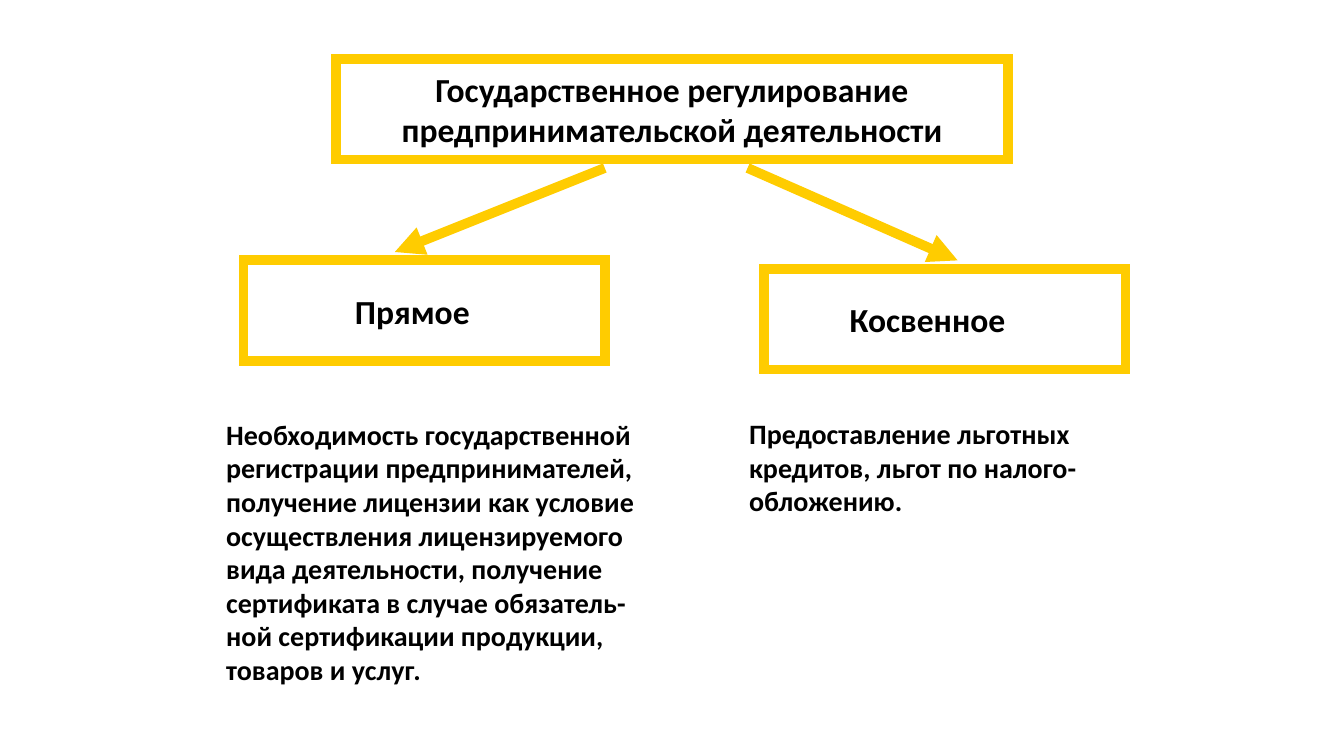
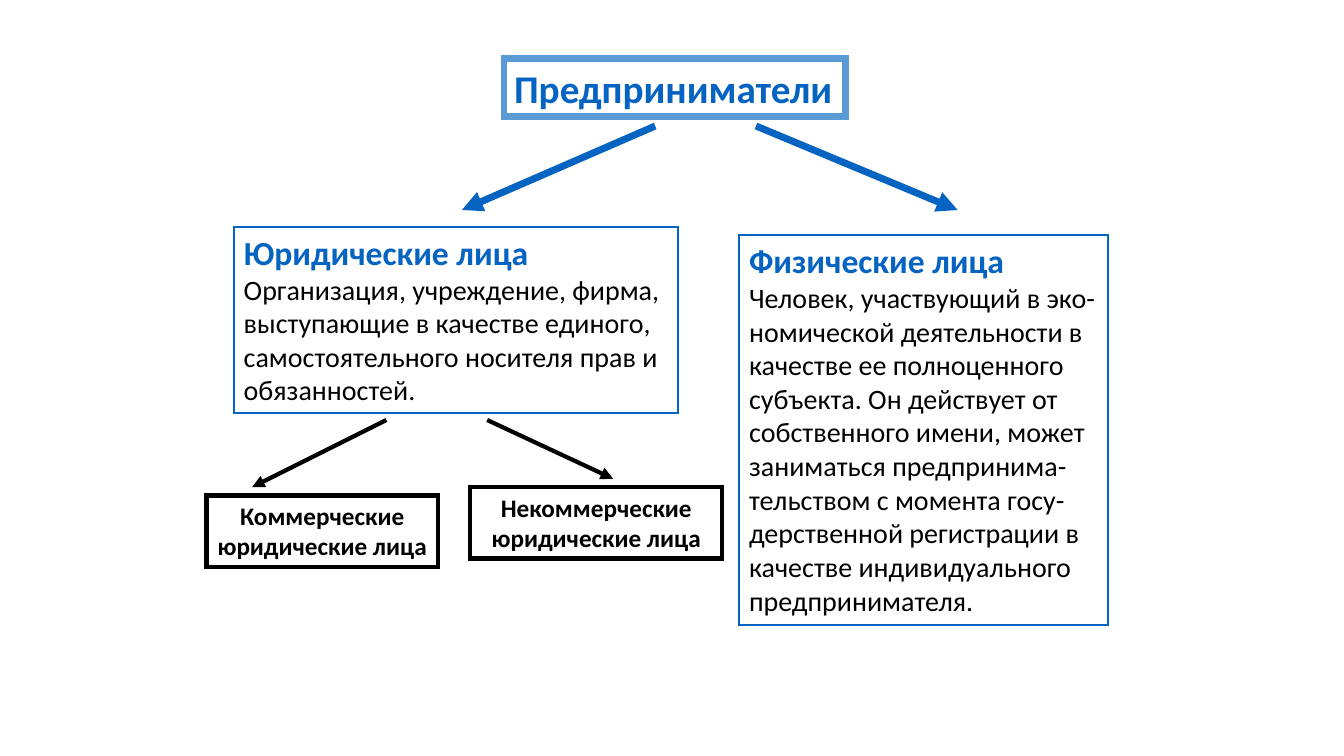
from dataclasses import dataclass
from typing import Any, Optional

import lxml.etree
import pptx
import pptx.dml.color
import pptx.enum.shapes
import pptx.enum.text
import pptx.oxml.ns
import pptx.util

YELLOW, BLUE, LIGHT_BLUE, BLACK = "FFCC00", "0563C1", "5B9BD5", "000000"
TITLE_ONLY_LAYOUT = 5
LEFT = pptx.enum.text.PP_ALIGN.LEFT
CENTER = pptx.enum.text.PP_ALIGN.CENTER
TOP = pptx.enum.text.MSO_ANCHOR.TOP
MIDDLE = pptx.enum.text.MSO_ANCHOR.MIDDLE

# Text styles: font values and colour
STYLES: dict[str, tuple[dict[str, Any], str]] = {
    "banner": ({"size": pptx.util.Pt(28), "bold": True}, BLUE),
    "label": ({"size": pptx.util.Pt(24), "bold": True}, BLACK),
    "heading": ({"size": pptx.util.Pt(24), "bold": True}, BLUE),
    "strong": ({"size": pptx.util.Pt(20), "bold": True}, BLACK),
    "body": ({"size": pptx.util.Pt(20), "bold": False}, BLACK),
    "small": ({"size": pptx.util.Pt(18), "bold": True}, BLACK),
}


@dataclass(frozen=True)
class Box:
    left: float
    top: float
    width: float
    height: float
    style: str
    lines: tuple[str, ...]
    border: Optional[str] = None
    weight: float = 0
    heading: Optional[str] = None
    align: Any = LEFT
    anchor: Any = TOP
    right_inset: float = 7.2


@dataclass(frozen=True)
class Arrow:
    start: tuple[float, float]
    end: tuple[float, float]
    color: str
    weight: float


@dataclass(frozen=True)
class Diagram:
    title: Box
    boxes: tuple[Box, ...]
    arrows: tuple[Arrow, ...]


def rgb(value: str) -> pptx.dml.color.RGBColor:
    return pptx.dml.color.RGBColor.from_string(value)


def add_xml(parent: Any, tag: str, **attributes: str) -> None:
    lxml.etree.SubElement(parent, pptx.oxml.ns.qn(tag), attributes)


def set_line(line: Any, color: str, weight: float) -> Any:
    """Colour a line and return its XML element."""
    line.color.rgb = rgb(color)
    line.width = pptx.util.Pt(weight)
    element = line._get_or_add_ln()
    add_xml(element, "a:miter", lim="800000")
    return element


def write_text(shape: Any, box: Box) -> None:
    frame = shape.text_frame
    frame_format = {
        "word_wrap": False,
        "auto_size": pptx.enum.text.MSO_AUTO_SIZE.NONE,
        "vertical_anchor": box.anchor,
        "margin_left": pptx.util.Pt(7.2),
        "margin_right": pptx.util.Pt(box.right_inset),
        "margin_top": pptx.util.Pt(3.6),
        "margin_bottom": pptx.util.Pt(3.6),
    }
    for name, value in frame_format.items():
        setattr(frame, name, value)
    rows = [(line, box.style) for line in box.lines]
    if box.heading:
        rows.insert(0, (box.heading, "heading"))
    for index, (text, style) in enumerate(rows):
        para = frame.add_paragraph() if index else frame.paragraphs[0]
        para.alignment = box.align
        span = para.add_run()
        span.text = text
        font_format, color = STYLES[style]
        for name, value in {"name": "Calibri", **font_format}.items():
            setattr(span.font, name, value)
        span.font.color.rgb = rgb(color)


def draw_box(page: Any, box: Box, placeholder: Any = None) -> None:
    area = [pptx.util.Pt(n) for n in (box.left, box.top, box.width, box.height)]
    if placeholder is not None:
        shape = placeholder
        for name, value in zip(("left", "top", "width", "height"), area):
            setattr(shape, name, value)
    elif box.border:
        shape = page.shapes.add_shape(
            pptx.enum.shapes.MSO_SHAPE.RECTANGLE, *area)
        shape.shadow.inherit = False
    else:
        shape = page.shapes.add_textbox(*area)
    shape.fill.background()
    if box.border:
        set_line(shape.line, box.border, box.weight)
    write_text(shape, box)


def draw_arrow(page: Any, arrow: Arrow) -> None:
    points = [pptx.util.Pt(n) for n in (*arrow.start, *arrow.end)]
    connector = page.shapes.add_connector(
        pptx.enum.shapes.MSO_CONNECTOR.STRAIGHT, *points)
    line = set_line(connector.line, arrow.color, arrow.weight)
    add_xml(line, "a:tailEnd", type="triangle")
    add_xml(connector._element.spPr, "a:effectLst")


def draw_diagram(deck: Any, diagram: Diagram) -> None:
    page = deck.slides.add_slide(deck.slide_layouts[TITLE_ONLY_LAYOUT])
    draw_box(page, diagram.title, page.shapes.title)
    for arrow in diagram.arrows:
        draw_arrow(page, arrow)
    for box in diagram.boxes:
        draw_box(page, box)


# State regulation: direct and indirect
REGULATION = Diagram(
    title=Box(240, 42, 480, 72, "label",
              ("Государственное регулирование",
               "предпринимательской деятельности"),
              YELLOW, 7, align=CENTER, anchor=MIDDLE),
    arrows=(
        Arrow((432, 120), (282, 180), YELLOW, 7),
        Arrow((534, 120), (684, 186), YELLOW, 7),
    ),
    boxes=(
        Box(174, 186, 258, 72, "label", ("Прямое",), YELLOW, 7,
            align=CENTER, anchor=MIDDLE, right_inset=24),
        Box(546, 192, 258, 72, "label", ("Косвенное",), YELLOW, 7,
            align=CENTER, anchor=MIDDLE, right_inset=32),
        Box(154.5, 294.5, 308, 201, "strong",
            ("Необходимость государственной",
             "регистрации предпринимателей,",
             "получение лицензии как условие",
             "осуществления лицензируемого",
             "вида деятельности, получение",
             "сертификата в случае обязатель-",
             "ной сертификации продукции,",
             "товаров и услуг.")),
        Box(528, 294, 250, 80, "strong",
            ("Предоставление льготных",
             "кредитов, льгот по налого-",
             "обложению.")),
    ),
)

# Kinds of entrepreneurs
ENTREPRENEURS = Diagram(
    title=Box(360, 42, 244, 41, "banner", ("Предприниматели",),
              LIGHT_BLUE, 5),
    arrows=(
        Arrow((468, 90), (330, 150), BLUE, 5),
        Arrow((540, 90), (684, 150), BLUE, 5),
        Arrow((276, 300), (180, 348), BLACK, 3),
        Arrow((348, 300), (438, 342), BLACK, 3),
    ),
    boxes=(
        Box(167, 162, 317.5, 133, "body",
            ("Организация, учреждение, фирма,",
             "выступающие в качестве единого,",
             "самостоятельного носителя прав и",
             "обязанностей."),
            BLUE, 1.5, heading="Юридические лица"),
        Box(528, 168, 263.5, 278.5, "body",
            ("Человек, участвующий в эко-",
             "номической деятельности в",
             "качестве ее полноценного",
             "субъекта. Он действует от",
             "собственного имени, может",
             "заниматься предпринима-",
             "тельством с момента госу-",
             "дерственной регистрации в",
             "качестве индивидуального",
             "предпринимателя."),
            BLUE, 1.5, heading="Физические лица"),
        Box(147.5, 354, 165.5, 51, "small",
            ("Коммерческие", "юридические лица"), BLACK, 3, align=CENTER),
        Box(336, 348, 180, 51, "small",
            ("Некоммерческие", "юридические лица"), BLACK, 3, align=CENTER),
    ),
)


def main() -> None:
    deck = pptx.Presentation()
    deck.slide_width = pptx.util.Pt(960)
    deck.slide_height = pptx.util.Pt(540)
    for diagram in (REGULATION, ENTREPRENEURS):
        draw_diagram(deck, diagram)
    deck.save("out.pptx")


if __name__ == "__main__":
    main()
